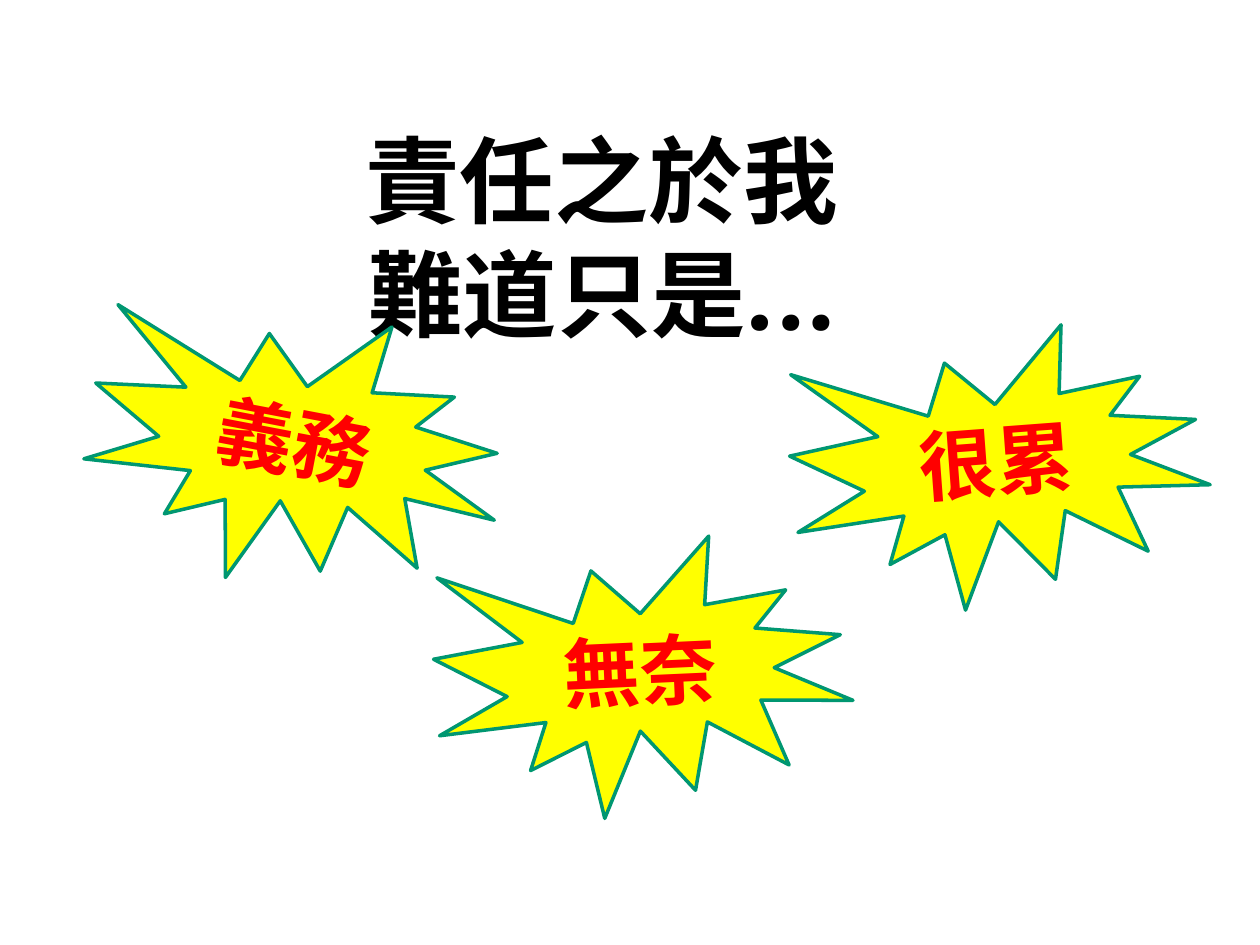
from dataclasses import dataclass

from lxml.etree import SubElement
from pptx import Presentation
from pptx.dml.color import RGBColor
from pptx.enum.shapes import MSO_SHAPE
from pptx.enum.text import MSO_ANCHOR, MSO_AUTO_SIZE, PP_ALIGN
from pptx.oxml.ns import qn
from pptx.util import Cm, Pt


@dataclass(frozen=True)
class Theme:
    font: str = "Vollkorn"
    ink: RGBColor = RGBColor(0, 0, 0)
    red: RGBColor = RGBColor(0xFF, 0, 0)
    fill: RGBColor = RGBColor(0xFF, 0xFF, 0)
    edge: RGBColor = RGBColor(0, 0x97, 0x71)
    head: Pt = Pt(54)
    lead: Pt = Pt(65)
    word: Pt = Pt(44)
    rule: Pt = Pt(2)


THEME = Theme()

# Burst size in cm, then word, left, top and turn of each
WIDE, HIGH = 8.41, 5.59
BURSTS = [
    ("義務", 1.75, 6.27, 10.8),
    ("無奈", 8.76, 10.87, -2.6),
    ("很累", 15.95, 6.65, -4.3),
]


def put_text(shape, text, size, color):
    """Set centred bold text in one paragraph."""
    frame = shape.text_frame
    frame.word_wrap = True
    frame.auto_size = MSO_AUTO_SIZE.NONE
    frame.vertical_anchor = MSO_ANCHOR.MIDDLE
    frame.text = text
    para = frame.paragraphs[0]
    para.alignment = PP_ALIGN.CENTER
    for run in para.runs:
        font = run.font
        font.name, font.size, font.bold = THEME.font, size, True
        font.color.rgb = color
        # East Asian typeface
        SubElement(font._element, qn("a:ea"), typeface=THEME.font)
    return para


def add_title(slide, text):
    title = slide.shapes.title
    title.left, title.top = Cm(2.84), Cm(2.24)
    title.width, title.height = Cm(18.57), Cm(5.03)
    para = put_text(title, text, THEME.head, THEME.ink)
    para.line_spacing = THEME.lead


def add_burst(slide, text, left, top, turn):
    burst = slide.shapes.add_shape(
        MSO_SHAPE.EXPLOSION1, Cm(left), Cm(top), Cm(WIDE), Cm(HIGH))
    burst.rotation = turn
    burst.shadow.inherit = False
    burst.fill.solid()
    burst.fill.fore_color.rgb = THEME.fill
    burst.line.color.rgb = THEME.edge
    burst.line.width = THEME.rule
    put_text(burst, text, THEME.word, THEME.red)


def main():
    deck = Presentation()
    deck.slide_width, deck.slide_height = Cm(25.4), Cm(19.05)
    slide = deck.slides.add_slide(deck.slide_layouts[5])

    # Heading on two lines
    add_title(slide, "責任之於我\v難道只是…")

    # Three bursts
    for burst in BURSTS:
        add_burst(slide, *burst)

    deck.save("out.pptx")


if __name__ == "__main__":
    main()
